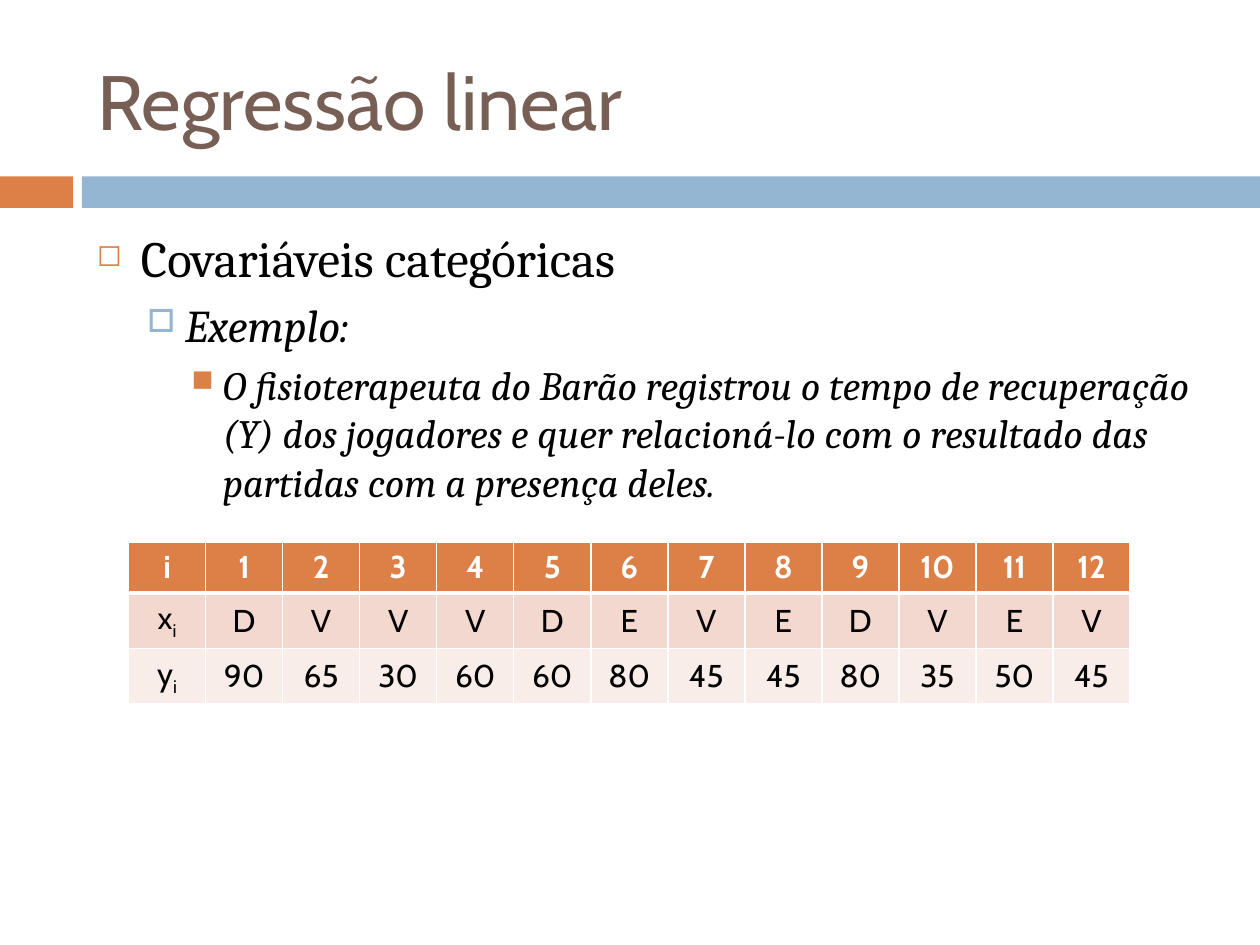
import pptx
import pptx.dml.color
import pptx.enum.shapes
import pptx.enum.text
import pptx.oxml.ns
import pptx.util
from lxml import etree

COLORS = {
    "orange": "DD8047", "blue": "94B6D2", "brown": "775F55",
    "black": "000000", "white": "FFFFFF",
    "band_dark": "F2D8CF", "band_light": "F9EDE9",
}
HEADING_FONT, BODY_FONT = "Cabin", "Cambria"
WIDTH, HEIGHT = 10, 7.5

# text, size, italic, space before, left margin, hanging indent, bullet, bullet colour, bullet size %
OUTLINE = [
    ("Covariáveis categóricas", 29, False, 7, 0.35, 0.35, "◻", "orange", 60),
    ("Exemplo:", 26, True, 5.5, 0.7, 0.3, "□", "blue", 70),
    ("O fisioterapeuta do Barão registrou o tempo de recuperação (Y) dos jogadores "
     "e quer relacioná-lo com o resultado das partidas com a presença deles.",
     23, True, 5, 1, 0.25, "■", "orange", 75),
]
RESULTS = "DVVVDEVEDVEV"
RECOVERY_TIMES = [90, 65, 30, 60, 60, 80, 45, 45, 80, 35, 50, 45]
# label, subscript, values, fill, text colour, bold
SAMPLE = [
    ("i", "", range(1, len(RESULTS) + 1), "orange", "white", True),
    ("x", "i", RESULTS, "band_dark", "black", False),
    ("y", "i", RECOVERY_TIMES, "band_light", "black", False),
]


def rgb(name):
    return pptx.dml.color.RGBColor.from_string(COLORS[name])


def inches(box):
    return [pptx.util.Inches(length) for length in box]


def add_text(paragraph, text, size=18, font=HEADING_FONT, color="black",
             bold=False, italic=False, subscript=False):
    run = paragraph.add_run()
    run.text = text
    run.font.size = pptx.util.Pt(size)
    run.font.name = font
    run.font.color.rgb = rgb(color)
    run.font.bold = bold
    run.font.italic = italic
    if subscript:
        run.font._element.set("baseline", "-25000")


def add_child(parent, tag, **attributes):
    child = etree.SubElement(parent, pptx.oxml.ns.qn(tag))
    for name, value in attributes.items():
        child.set(name, str(value))
    return child


def set_bullet(paragraph, char, color, percent, margin, hanging):
    properties = paragraph._p.get_or_add_pPr()
    properties.set("marL", str(pptx.util.Inches(margin)))
    properties.set("indent", str(-pptx.util.Inches(hanging)))
    add_child(add_child(properties, "a:buClr"), "a:srgbClr", val=COLORS[color])
    add_child(properties, "a:buSzPct", val=percent * 1000)
    add_child(properties, "a:buChar", char=char)


def set_borders(cell, **points):
    """Draw white borders; must run before the cell gets its fill."""
    properties = cell._tc.get_or_add_tcPr()
    for side in ("L", "R", "T", "B"):
        line = add_child(properties, f"a:ln{side}", w=pptx.util.Pt(points.get(side, 1)))
        add_child(add_child(line, "a:solidFill"), "a:srgbClr", val=COLORS["white"])


def add_divider(slide, box):
    left, top, width, height = box
    accent, gap = 0.058 * width, 0.007 * width
    start = left + accent + gap
    for x, length, color in ((left, accent, "orange"),
                             (start, left + width - start, "blue")):
        bar = slide.shapes.add_shape(pptx.enum.shapes.MSO_SHAPE.RECTANGLE,
                                     *inches((x, top, length, height)))
        bar.shadow.inherit = False
        bar.fill.solid()
        bar.fill.fore_color.rgb = rgb(color)
        bar.line.fill.background()


def place_title(slide, box, text):
    title = slide.shapes.title
    title.left, title.top, title.width, title.height = inches(box)
    frame = title.text_frame
    frame.auto_size = pptx.enum.text.MSO_AUTO_SIZE.NONE
    frame.vertical_anchor = pptx.enum.text.MSO_ANCHOR.MIDDLE
    frame.paragraphs[0].alignment = pptx.enum.text.PP_ALIGN.LEFT
    add_text(frame.paragraphs[0], text, size=44, color="brown")


def add_outline(slide, box, items):
    frame = slide.shapes.add_textbox(*inches(box)).text_frame
    frame.word_wrap = True
    for index, item in enumerate(items):
        text, size, italic, before, margin, hanging, char, color, percent = item
        paragraph = frame.add_paragraph() if index else frame.paragraphs[0]
        paragraph.level = index
        paragraph.space_before = pptx.util.Pt(before)
        set_bullet(paragraph, char, color, percent, margin, hanging)
        add_text(paragraph, text, size=size, font=BODY_FONT, italic=italic)


def add_sample_table(slide, box, rows):
    column_count = len(rows[0][2]) + 1
    table = slide.shapes.add_table(len(rows), column_count, *inches(box)).table
    table.horz_banding = False
    for column in table.columns:
        column.width = pptx.util.Inches(box[2] / column_count)
    for row, (label, index, values, fill, color, bold) in enumerate(rows):
        for column, text in enumerate([label, *values]):
            cell = table.cell(row, column)
            set_borders(cell, T=3 if row == 1 else 1, B=3 if row == 0 else 1)
            cell.fill.solid()
            cell.fill.fore_color.rgb = rgb(fill)
            cell.vertical_anchor = pptx.enum.text.MSO_ANCHOR.MIDDLE
            paragraph = cell.text_frame.paragraphs[0]
            paragraph.alignment = pptx.enum.text.PP_ALIGN.CENTER
            add_text(paragraph, str(text), color=color, bold=bold)
            if index and column == 0:
                add_text(paragraph, index, color=color, subscript=True)


def main():
    presentation = pptx.Presentation()
    presentation.slide_width, presentation.slide_height = inches((WIDTH, HEIGHT))
    slide = presentation.slides.add_slide(presentation.slide_layouts[5])
    margin, content_width = 0.067 * WIDTH, 0.892 * WIDTH
    add_divider(slide, (0, 1.4, WIDTH, 0.25))
    place_title(slide, (margin, 0.25, content_width, 1.08), "Regressão linear")
    add_outline(slide, (margin, 1.75, content_width, 5.23), OUTLINE)
    add_sample_table(slide, (1.02, 4.3, 7.95, 1.22), SAMPLE)
    presentation.save("out.pptx")


if __name__ == "__main__":
    main()
